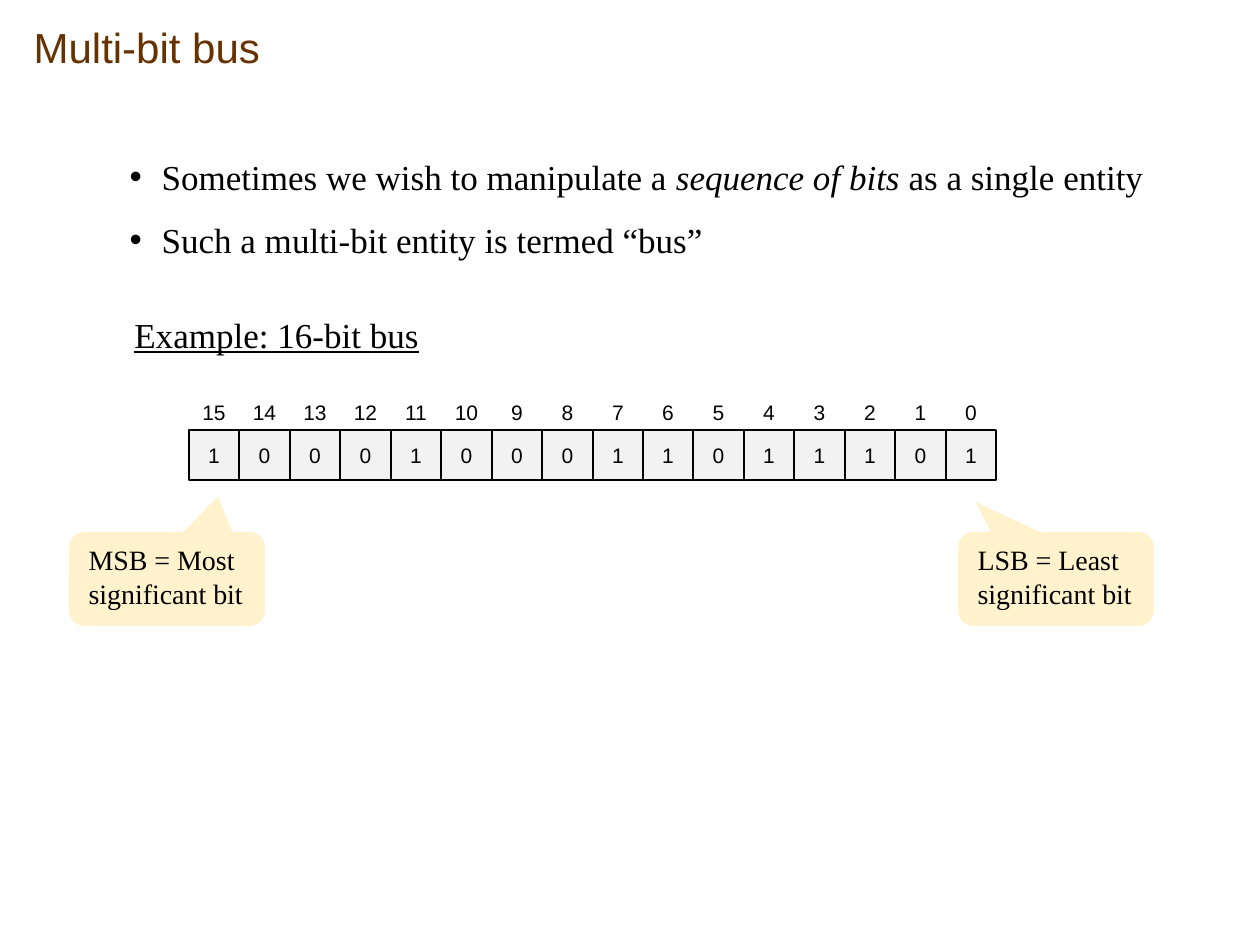
"""Builds the slide that explains a multi-bit bus."""
from dataclasses import dataclass

from lxml.etree import SubElement
from pptx import Presentation
from pptx.dml.color import RGBColor
from pptx.enum.shapes import MSO_SHAPE
from pptx.enum.text import MSO_ANCHOR, MSO_AUTO_SIZE, PP_ALIGN
from pptx.oxml.ns import qn
from pptx.util import Pt

EMU_PER_PX = 914400 / 126


@dataclass(frozen=True)
class Theme:
    heading: str = "663300"
    ink: str = "000000"
    paper: str = "FFFFFF"
    cell: str = "F2F2F2"
    callout: str = "FFF2CC"
    sans: str = "Arial"
    serif: str = "Times New Roman"
    mono: str = "Courier New"
    title_size: int = 24
    body_size: int = 20
    callout_size: int = 16
    bit_size: int = 12


def px(length):
    return round(length * EMU_PER_PX)


def rgb(color):
    return RGBColor.from_string(color)


def write(paragraph, text, *, font, size, color, italic=None, underline=None,
          align=PP_ALIGN.LEFT, before=0, spacing=None, rtl_font=None):
    paragraph.alignment = align
    paragraph.space_before = Pt(before)
    if spacing:
        paragraph.line_spacing = spacing
    run = paragraph.add_run()
    run.text = text
    run.font.size = Pt(size)
    run.font.color.rgb = rgb(color)
    run.font.italic = italic
    run.font.underline = underline
    run.font.name = font
    if rtl_font:
        paragraph._p.get_or_add_pPr().set("rtl", "1")
        SubElement(run._r.get_or_add_rPr(), qn("a:cs"), typeface=rtl_font)


class SlideBuilder:
    def __init__(self, slide, theme):
        self.slide = slide
        self.theme = theme

    def place(self, shape, left, top, width, height):
        shape.left, shape.top = px(left), px(top)
        shape.width, shape.height = px(width), px(height)

    def title(self, text, *box):
        heading = self.slide.shapes.title
        self.place(heading, *box)
        frame = heading.text_frame
        frame.auto_size = MSO_AUTO_SIZE.NONE
        frame.vertical_anchor = MSO_ANCHOR.MIDDLE
        write(frame.paragraphs[0], text, font=self.theme.sans,
              size=self.theme.title_size, color=self.theme.heading)

    def bullets(self, points, *box):
        body = self.slide.placeholders[1]
        self.place(body, *box)
        frame = body.text_frame
        frame.auto_size = MSO_AUTO_SIZE.NONE
        for number, point in enumerate(points):
            paragraph = frame.add_paragraph() if number else frame.paragraphs[0]
            for phrase, italic in point:
                write(paragraph, phrase, font=self.theme.serif, italic=italic,
                      size=self.theme.body_size, color=self.theme.ink, before=12)
            properties = paragraph._p.get_or_add_pPr()
            properties.set("marL", str(px(32)))
            properties.set("indent", str(-px(32)))
            SubElement(properties, qn("a:buChar"), char="•")

    def subheading(self, text, *box):
        subheading = self.slide.shapes.add_textbox(*map(px, box))
        subheading.text_frame.word_wrap = True
        write(subheading.text_frame.paragraphs[0], text, font=self.theme.serif,
              size=self.theme.body_size, color=self.theme.ink, underline=True,
              before=22, spacing=0.9)

    def filled(self, preset, fill, *box):
        shape = self.slide.shapes.add_shape(preset, *map(px, box))
        shape.shadow.inherit = False
        shape.fill.solid()
        shape.fill.fore_color.rgb = rgb(fill)
        shape.line.fill.background()
        return shape

    def square(self, text, left, top, width, height, *, fill, font, outlined):
        square = self.filled(MSO_SHAPE.RECTANGLE, fill, left, top, width, height)
        if outlined:
            square.line.color.rgb = rgb(self.theme.ink)
            square.line.width = Pt(1)
        frame = square.text_frame
        frame.word_wrap = outlined
        frame.vertical_anchor = MSO_ANCHOR.MIDDLE
        write(frame.paragraphs[0], text, font=font, size=self.theme.bit_size,
              color=self.theme.ink, align=PP_ALIGN.CENTER,
              rtl_font=self.theme.sans)

    def bit_row(self, values, left, top, width, height, **look):
        edges = [left + round(width * i / len(values))
                 for i in range(len(values) + 1)]
        for value, start, end in zip(values, edges, edges[1:]):
            self.square(str(value), start, top, end - start, height, **look)

    def callout(self, text, tip, *box):
        callout = self.filled(MSO_SHAPE.ROUNDED_RECTANGULAR_CALLOUT,
                              self.theme.callout, *box)
        callout.adjustments[0], callout.adjustments[1] = tip
        frame = callout.text_frame
        frame.word_wrap = True
        frame.vertical_anchor = MSO_ANCHOR.TOP
        frame.margin_left = px(15)
        write(frame.paragraphs[0], text, font=self.theme.serif,
              size=self.theme.callout_size, color=self.theme.ink)


def main():
    theme = Theme()
    deck = Presentation()
    deck.slide_width, deck.slide_height = px(1260), px(945)
    builder = SlideBuilder(deck.slides.add_slide(deck.slide_layouts[1]), theme)

    builder.title("Multi-bit bus", 21, 10, 1207, 73)
    builder.bullets([
        [("Sometimes we wish to manipulate a ", None),
         ("sequence of bits", True),
         (" as a single entity", None)],
        [("Such a multi-bit entity is termed “bus”", None)],
    ], 117, 149, 1071, 136)

    builder.callout("LSB = Least significant bit", (-0.41, -0.82),
                    958, 532, 196, 94)
    builder.callout("MSB = Most significant bit", (0.26, -0.88),
                    69, 532, 196, 94)

    bus_bits = "1000100011011101"
    builder.bit_row(range(len(bus_bits) - 1, -1, -1), 189, 387, 807, 51,
                    fill=theme.paper, font=theme.serif, outlined=False)
    builder.subheading("Example: 16-bit bus", 122, 312, 333, 91)
    builder.bit_row(bus_bits, 189, 430, 807, 50,
                    fill=theme.cell, font=theme.mono, outlined=True)

    deck.save("out.pptx")


if __name__ == "__main__":
    main()
